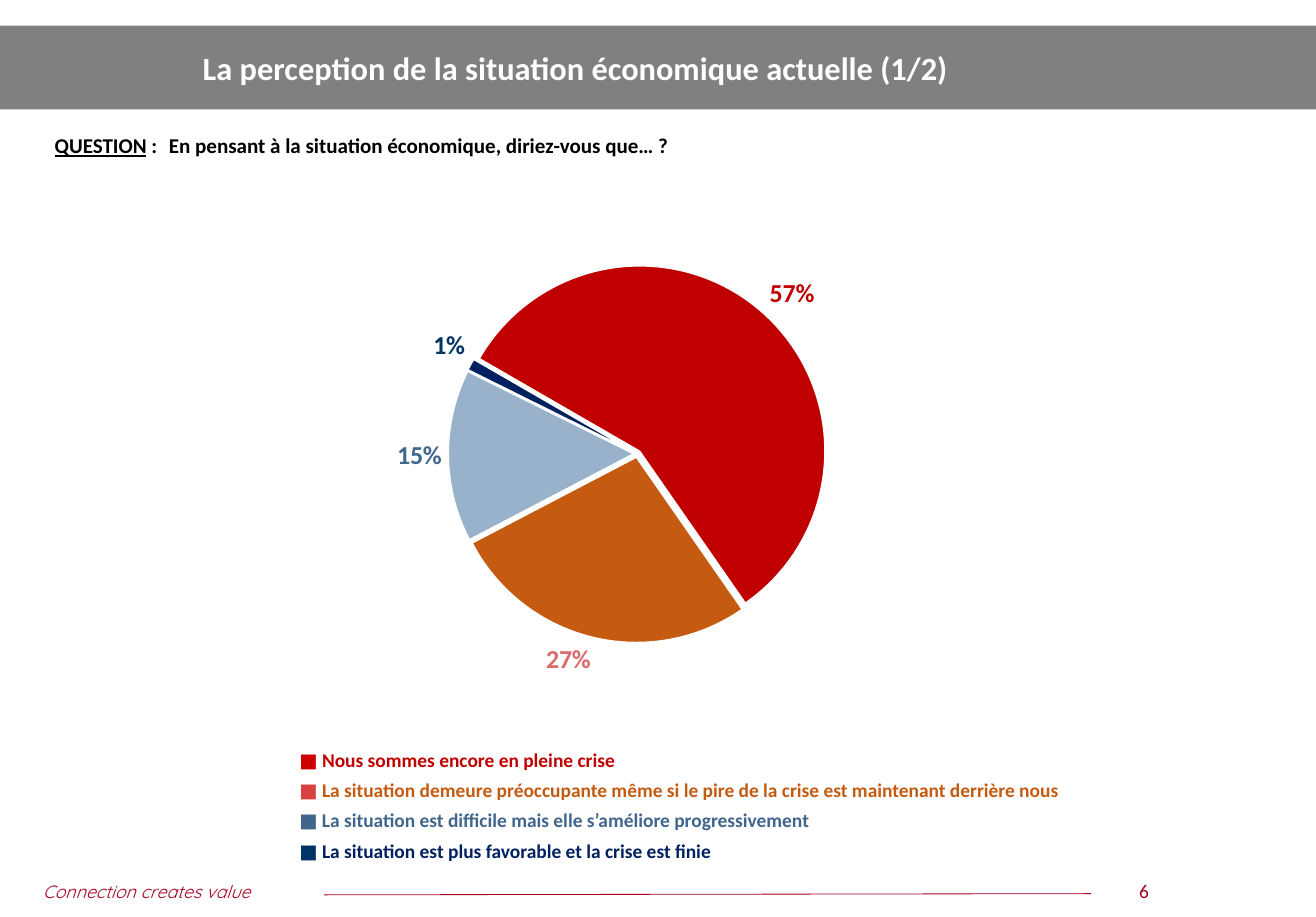
from lxml import etree
from pptx import Presentation
from pptx.chart.data import CategoryChartData
from pptx.dml.color import RGBColor
from pptx.enum.chart import XL_CHART_TYPE, XL_LABEL_POSITION
from pptx.enum.shapes import MSO_CONNECTOR, MSO_SHAPE
from pptx.enum.text import MSO_ANCHOR, PP_ALIGN
from pptx.oxml.ns import qn
from pptx.util import Pt

PX = 9144  # 100 px to the inch
PIE, OUTSIDE = XL_CHART_TYPE.PIE, XL_LABEL_POSITION.OUTSIDE_END
RECTANGLE, STRAIGHT = MSO_SHAPE.RECTANGLE, MSO_CONNECTOR.STRAIGHT
TOP, MIDDLE = MSO_ANCHOR.TOP, MSO_ANCHOR.MIDDLE
LEFT, CENTER, JUSTIFY = PP_ALIGN.LEFT, PP_ALIGN.CENTER, PP_ALIGN.JUSTIFY

WHITE = RGBColor(0xFF, 0xFF, 0xFF)
BLACK = RGBColor(0, 0, 0)
GREY = RGBColor(0x80, 0x80, 0x80)
CRIMSON = RGBColor(0xA5, 0x00, 0x21)
RED = RGBColor(0xC0, 0x00, 0x00)
BRIGHT_RED = RGBColor(0xCC, 0x00, 0x00)
SOFT_RED = RGBColor(0xD9, 0x40, 0x40)
PINK = RGBColor(0xDB, 0x6B, 0x6B)
ORANGE = RGBColor(0xC5, 0x5A, 0x11)
PALE_BLUE = RGBColor(0x99, 0xB2, 0xCC)
STEEL = RGBColor(0x40, 0x66, 0x8C)
NAVY = RGBColor(0x00, 0x20, 0x60)
DEEP_BLUE = RGBColor(0x00, 0x33, 0x66)

# share, slice colour, share colour, legend marker colour, answer colour, answer
ANSWERS = [
    (0.57, RED, RED, BRIGHT_RED, RED, "Nous sommes encore en pleine crise"),
    (0.27, ORANGE, PINK, SOFT_RED, ORANGE,
     "La situation demeure préoccupante même si le pire de la crise est maintenant derrière nous"),
    (0.15, PALE_BLUE, STEEL, STEEL, STEEL,
     "La situation est difficile mais elle s’améliore progressivement"),
    (0.01, NAVY, DEEP_BLUE, DEEP_BLUE, NAVY,
     "La situation est plus favorable et la crise est finie"),
]
PLOT_LAYOUT = {"layoutTarget": "inner", "xMode": "edge", "yMode": "edge",
               "x": 0.25, "y": 0.11, "w": 0.59, "h": 0.75}


def emu(box):
    return [length * PX for length in box]


def set_font(font, size, color, **values):
    font.color.rgb = color
    for name, value in {"name": "Calibri", "size": Pt(size), **values}.items():
        setattr(font, name, value)


def add_run(paragraph, text, size, color, **values):
    run = paragraph.add_run()
    run.text = text
    set_font(run.font, size, color, **values)


def add_band(slide, box, color):
    band = slide.shapes.add_shape(RECTANGLE, *emu(box))
    band.shadow.inherit = False
    band.fill.solid()
    band.fill.fore_color.rgb = color
    band.line.fill.background()
    return band


def add_text_box(slide, box, align=LEFT, anchor=TOP):
    frame = slide.shapes.add_textbox(*emu(box)).text_frame
    frame.word_wrap = True
    frame.vertical_anchor = anchor
    frame.paragraphs[0].alignment = align
    return frame


def add_header(slide, box):
    left, top, width, height = box
    add_band(slide, box, GREY)
    title = add_text_box(slide, (left + 164, top, width - 181, height), anchor=MIDDLE)
    add_run(title.paragraphs[0], "La perception de la situation économique actuelle (1/2)",
            20, WHITE, bold=True)


def add_question(slide, box):
    question = add_text_box(slide, box, JUSTIFY)
    margins = {"margin_left": 9, "margin_top": 18, "margin_right": 36, "margin_bottom": 18}
    for name, value in margins.items():
        setattr(question, name, value * PX)
    line = question.paragraphs[0]
    properties = line._p.get_or_add_pPr()
    properties.set("marL", str(98 * PX))
    properties.set("indent", str(-98 * PX))
    add_run(line, "QUESTION", 13, BLACK, bold=True, underline=True)
    add_run(line, " :\tEn pensant à la situation économique, diriez-vous que… ?",
            13, BLACK, bold=True)


def add_pie(slide, box):
    data = CategoryChartData(number_format="0%")
    data.categories = [str(i + 1) for i in range(len(ANSWERS))]
    data.add_series("Series 1", [answer[0] for answer in ANSWERS])
    chart = slide.shapes.add_chart(PIE, *emu(box), data).chart
    chart.has_title = False
    chart.has_legend = False
    set_font(chart.font, 18, BLACK)
    plot = chart.plots[0]
    plot.vary_by_categories = True
    shares = plot.series[0]
    shares.format.line.color.rgb = WHITE

    # Slices and their percentages
    labels = shares.data_labels
    label_format = {"show_value": True, "number_format": "0%",
                    "number_format_is_linked": False, "position": OUTSIDE}
    for name, value in label_format.items():
        setattr(labels, name, value)
    set_font(labels.font, 16, BLACK, bold=True)
    for i, (_, slice_color, share_color, *_) in enumerate(ANSWERS):
        point = shares.points[i]
        point.format.fill.solid()
        point.format.fill.fore_color.rgb = slice_color
        point.format.line.color.rgb = WHITE
        point.format.line.width = Pt(0.75)
        set_font(point.data_label.font, 16, share_color, bold=True)
        point.data_label.position = OUTSIDE

    # Gap between slices, first angle and plot position
    explosion = etree.Element(qn("c:explosion"), val="2")
    shares._element.find(qn("c:spPr")).addnext(explosion)
    pie = plot._element
    for angle in pie.findall(qn("c:firstSliceAng")):
        pie.remove(angle)
    etree.SubElement(pie, qn("c:firstSliceAng"), val="300")
    area = pie.getparent()
    for layout in area.findall(qn("c:layout")):
        area.remove(layout)
    layout = etree.Element(qn("c:layout"))
    manual = etree.SubElement(layout, qn("c:manualLayout"))
    for name, value in PLOT_LAYOUT.items():
        etree.SubElement(manual, qn("c:" + name), val=str(value))
    area.insert(0, layout)


def add_legend(slide, box):
    legend = add_band(slide, box, WHITE).text_frame
    legend.word_wrap = True
    legend.vertical_anchor = TOP
    for i, (*_, marker_color, answer_color, answer) in enumerate(ANSWERS):
        line = legend.add_paragraph() if i else legend.paragraphs[0]
        line.alignment = LEFT
        line.line_spacing = 1.3
        add_run(line, "■ ", 12, marker_color, bold=True)
        add_run(line, answer, 12, answer_color, bold=True)


def add_footer(slide, box):
    left, top, width, height = box
    tagline = add_text_box(slide, (left, top + 1, 298, height - 1))
    add_run(tagline.paragraphs[0], "Connection creates value", 11, CRIMSON,
            name="Quicksand", italic=True)
    rule = slide.shapes.add_connector(
        STRAIGHT, *emu((left + 251, top + 18, left + 909, top + 17)))
    rule.line.color.rgb = CRIMSON
    rule.line.width = Pt(0.5)
    etree.SubElement(rule._element.spPr, qn("a:effectLst"))
    page = add_text_box(slide, (left + width - 59, top, 59, height), CENTER)
    add_run(page.paragraphs[0], "6", 12, CRIMSON)


def main():
    deck = Presentation()
    deck.slide_width, deck.slide_height = emu((1129, 787))
    slide = deck.slides.add_slide(deck.slide_layouts[6])
    add_header(slide, (0, 22, 1129, 72))
    add_footer(slide, (27, 750, 984, 30))
    add_pie(slide, (247, 180, 550, 432))
    add_question(slide, (38, 103, 1067, 58))
    add_legend(slide, (247, 631, 727, 115))
    deck.save("out.pptx")


if __name__ == "__main__":
    main()
